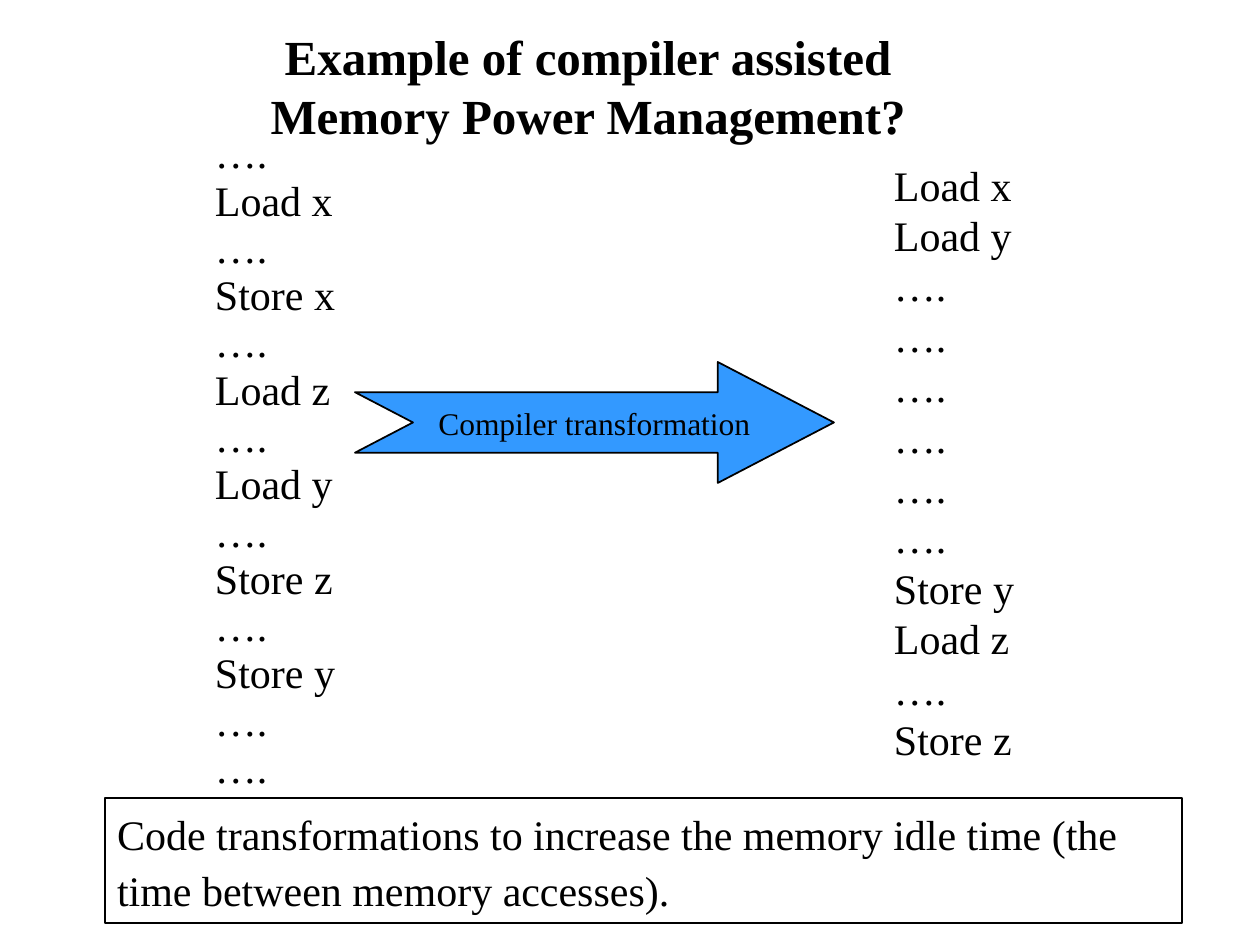
from pptx import Presentation
from pptx.dml.color import RGBColor
from pptx.enum.shapes import MSO_SHAPE
from pptx.enum.text import MSO_ANCHOR, PP_ALIGN
from pptx.util import Emu, Pt

SCALE = 914400 / 126
BLACK, WHITE, BLUE = "000000", "FFFFFF", "3399FF"
GAP = "…."
BEFORE = [GAP, "Load x", GAP, "Store x", GAP, "Load z", GAP, "Load y",
          GAP, "Store z", GAP, "Store y", GAP, GAP]
AFTER = ["Load x", "Load y", *[GAP] * 6, "Store y", "Load z", GAP, "Store z"]


def px(n):
    return Emu(round(n * SCALE))


def paint(fmt, hue):
    """Set a solid colour on a fill."""
    fmt.solid()
    fmt.fore_color.rgb = RGBColor.from_string(hue)


def write(shape, lines, size=24, bold=False, align=PP_ALIGN.LEFT, space=None,
          wrap=True, anchor=MSO_ANCHOR.TOP, pad=(12, 6)):
    frame = shape.text_frame
    frame.word_wrap = wrap
    frame.vertical_anchor = anchor
    frame.margin_left = frame.margin_right = px(pad[0])
    frame.margin_top = frame.margin_bottom = px(pad[1])
    for i, line in enumerate(lines):
        para = frame.add_paragraph() if i else frame.paragraphs[0]
        para.alignment = align
        if space:
            para.line_spacing = space
        run = para.add_run()
        run.text = line
        font = run.font
        font.name, font.size, font.bold = "Times New Roman", Pt(size), bold
        font.color.rgb = RGBColor.from_string(BLACK)


def outline(shape, width):
    shape.shadow.inherit = False
    paint(shape.line.fill, BLACK)
    shape.line.width = Pt(width)


def title(slide, box):
    shape = slide.shapes.add_textbox(*map(px, box))
    paint(shape.fill, WHITE)
    write(shape, ["Example of compiler assisted Memory Power Management?"],
          size=28, bold=True, align=PP_ALIGN.CENTER)


def code(slide, box, lines, space=None):
    """Add one column of memory operations."""
    shape = slide.shapes.add_textbox(*map(px, box))
    write(shape, lines, space=space, wrap=False, pad=(11, 5))


def arrow(slide, box):
    shape = slide.shapes.add_shape(MSO_SHAPE.NOTCHED_RIGHT_ARROW, *map(px, box))
    shape.adjustments[0] = 0.5
    shape.adjustments[1] = 0.96
    paint(shape.fill, BLUE)
    outline(shape, 1)
    write(shape, ["Compiler transformation"], size=18, align=PP_ALIGN.CENTER,
          wrap=False, anchor=MSO_ANCHOR.MIDDLE, pad=(11, 5))


def note(slide, box):
    shape = slide.shapes.add_shape(MSO_SHAPE.RECTANGLE, *map(px, box))
    shape.fill.background()
    outline(shape, 0.75)
    write(shape, ["Code transformations to increase the memory idle time "
                  "(the time between memory accesses)."], space=1.1)


def main():
    deck = Presentation()
    deck.slide_width, deck.slide_height = px(1260), px(945)
    slide = deck.slides.add_slide(deck.slide_layouts[6])
    title(slide, (189, 21, 798, 126))
    code(slide, (204, 125, 152, 679), BEFORE, space=Pt(27))
    code(slide, (883, 154, 152, 622), AFTER)
    arrow(slide, (355, 362, 479, 121))
    note(slide, (105, 798, 1077, 125))
    deck.save("out.pptx")


if __name__ == "__main__":
    main()
